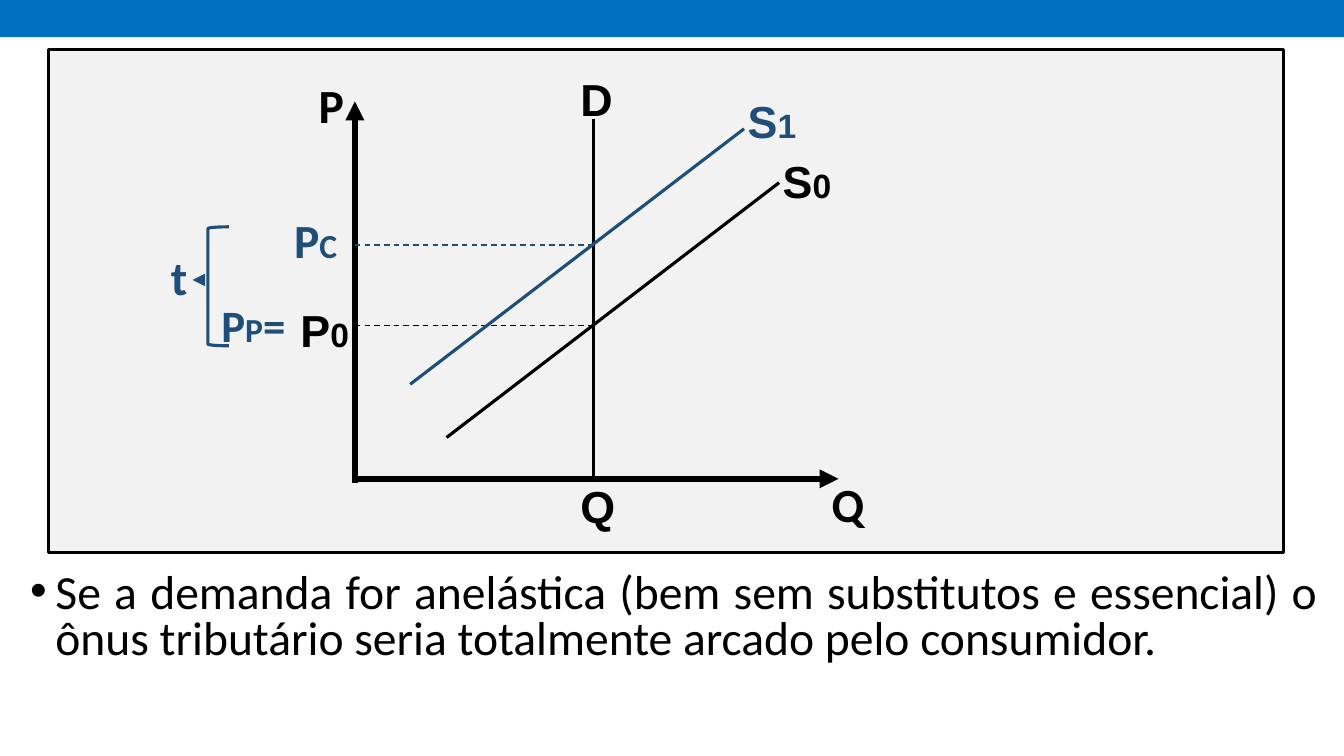
from dataclasses import dataclass

from lxml import etree
from pptx import Presentation
from pptx import util as u
from pptx.dml.color import RGBColor
from pptx.enum import dml, shapes, text
from pptx.oxml import ns

Pt = u.Pt


@dataclass(frozen=True)
class Theme:
    bar: str = "0070C0"
    panel: str = "F2F2F2"
    ink: str = "000000"
    tax: str = "1F4E79"
    serif_free: str = "Calibri"
    plot: str = "Arial"
    large: int = 34
    label: int = 32
    sub: int = 24
    axis: float = 4.5
    curve: float = 2.25
    arrow: float = 3
    guide: float = 1


T = Theme()


def set_all(obj, values):
    for name, value in values.items():
        setattr(obj, name, value)


def add_xml(parent, tag, **attrs):
    return etree.SubElement(parent, ns.qn(tag), attrs)


def stroke(sp, color, width):
    sp.line.color.rgb = RGBColor.from_string(color)
    sp.line.width = Pt(width)


def shape(s, kind, box, fill=None, color=None, width=T.curve):
    sp = s.shapes.add_shape(kind, *map(Pt, box))
    sp.shadow.inherit = False
    if fill:
        sp.fill.solid()
        sp.fill.fore_color.rgb = RGBColor.from_string(fill)
    else:
        sp.fill.background()
    if color:
        stroke(sp, color, width)
    else:
        sp.line.fill.background()


def line(s, start, end, color, width, dashed=False, arrow=False):
    sp = s.shapes.add_connector(shapes.MSO_CONNECTOR.STRAIGHT, *map(Pt, start + end))
    stroke(sp, color, width)
    if dashed:
        sp.line.dash_style = dml.MSO_LINE.DASH
    if arrow:
        add_xml(sp.line._get_or_add_ln(), "a:tailEnd", type="triangle")
    add_xml(sp._element.spPr, "a:effectLst")


def text_box(s, box):
    tf = s.shapes.add_textbox(*map(Pt, box)).text_frame
    tf.word_wrap = True
    return tf.paragraphs[0]


def run(p, words, size, font, color, bold):
    r = p.add_run()
    r.text = words
    set_all(r.font, {"name": font, "size": Pt(size), "bold": bold})
    r.font.color.rgb = RGBColor.from_string(color)


def label(s, box, font, color, *parts):
    p = text_box(s, box)
    for words, size in parts:
        run(p, words, size, font, color, True)


def bullet(s, box, words):
    p = text_box(s, box)
    set_all(p, {"alignment": text.PP_ALIGN.JUSTIFY, "line_spacing": 0.8})
    pPr = p._p.get_or_add_pPr()
    for name, indent in {"marL": 18, "indent": -18}.items():
        pPr.set(name, str(Pt(indent)))
    add_xml(pPr, "a:buFont", typeface=T.plot)
    add_xml(pPr, "a:buChar", char="•")
    run(p, words, T.large, T.serif_free, T.ink, False)


def main():
    prs = Presentation()
    set_all(prs, {"slide_width": Pt(960), "slide_height": Pt(540)})
    s = prs.slides.add_slide(prs.slide_layouts[6])
    rect = shapes.MSO_SHAPE.RECTANGLE
    shape(s, rect, (0, -2, 960, 28.5), T.bar)
    shape(s, rect, (34.5, 35.5, 882.5, 359.5), T.panel, T.ink)
    bullet(s, (14.5, 406, 934, 81.5),
           "Se a demanda for anelástica (bem sem substitutos e essencial) o "
           "ônus tributário seria totalmente arcado pelo consumidor.")

    axis_x, axis_y, demand_x = 253.5, 342, 424
    line(s, (axis_x, 345), (axis_x, 72.5), T.ink, T.axis, arrow=True)
    line(s, (axis_x, axis_y), (599, axis_y), T.ink, T.axis, arrow=True)
    line(s, (demand_x, 85), (demand_x, axis_y), T.ink, T.curve)
    for color, price, low, high in (
        (T.ink, 232.5, (319, 312.5), (556.5, 130.5)),
        (T.tax, 175, (293, 274.5), (531.5, 92)),
    ):
        line(s, low, high, color, T.curve)
        line(s, (axis_x, price), (demand_x, price), color, T.guide, dashed=True)

    shape(s, shapes.MSO_SHAPE.LEFT_BRACKET, (148.5, 162, 15, 85), color=T.tax)
    line(s, (142, 200), (137.5, 200), T.tax, T.arrow, arrow=True)

    for box, font, color, *parts in (
        ((220.5, 50.5, 35, 48), T.serif_free, T.ink, ("P", T.large)),
        ((587, 336, 35, 48), T.serif_free, T.ink, ("Q", T.large)),
        ((552, 106, 53, 46), T.plot, T.ink, ("S", T.label), ("0", T.sub)),
        ((207.5, 212.5, 54, 46), T.plot, T.ink, ("P", T.label), ("0", T.sub)),
        ((407.5, 48, 46, 46), T.plot, T.ink, ("D", T.label)),
        ((407.5, 338.5, 46, 46), T.plot, T.ink, ("Q", T.label)),
        ((527, 63.5, 53, 46), T.plot, T.tax, ("S", T.label), ("1", T.sub)),
        ((151, 209, 77, 46), T.serif_free, T.tax,
         ("P", T.label), ("P", T.sub), ("=", T.label)),
        ((203, 147, 65.5, 48), T.serif_free, T.tax, ("P", T.large), ("C", T.sub)),
        ((115, 173.5, 30, 48), T.serif_free, T.tax, ("t", T.large)),
    ):
        label(s, box, font, color, *parts)
    prs.save("out.pptx")


if __name__ == "__main__":
    main()
